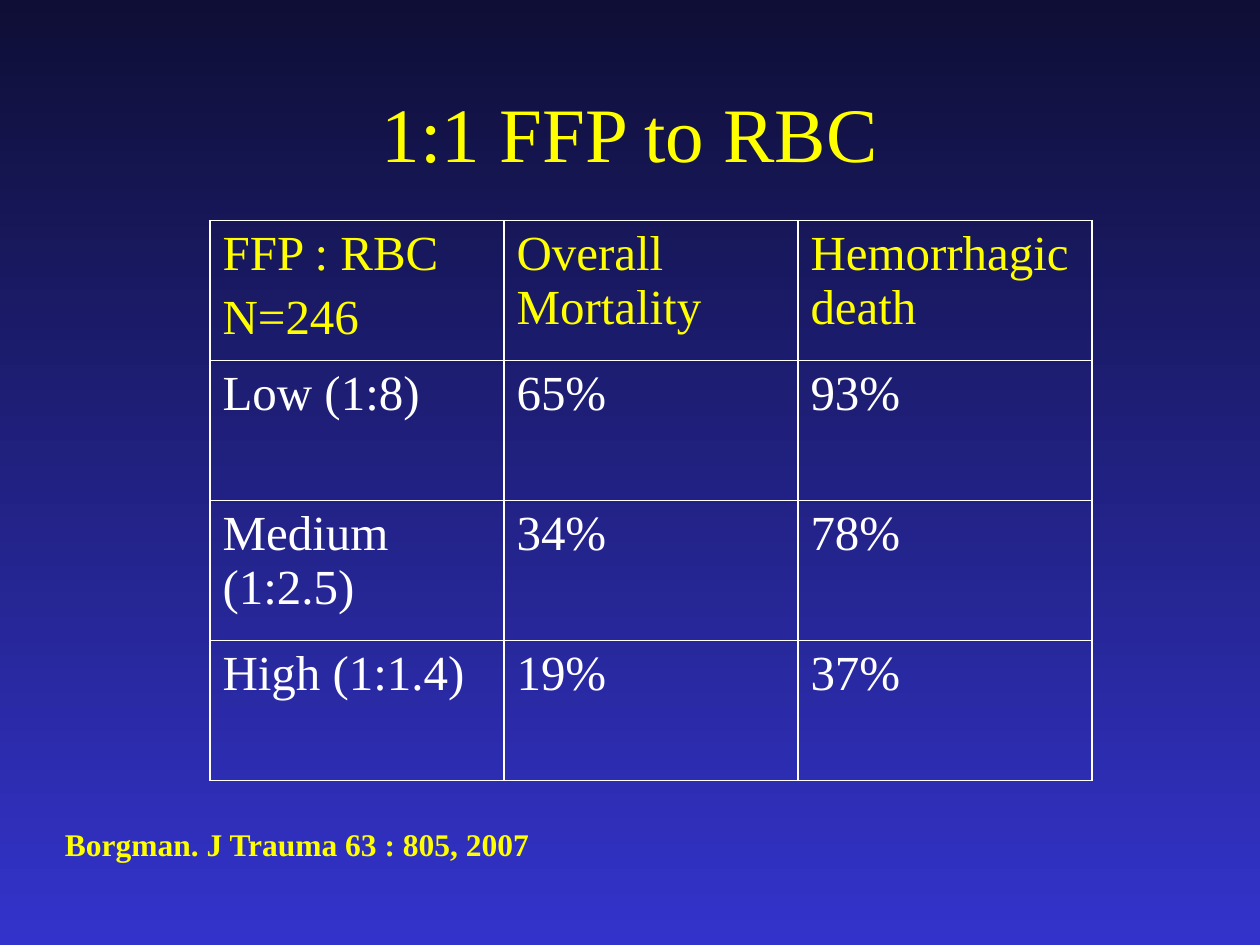
from lxml import etree
from pptx import Presentation
from pptx.dml.color import RGBColor
from pptx.enum.text import MSO_ANCHOR, PP_ALIGN
from pptx.oxml.ns import qn
from pptx.util import Pt

CENTER, LEFT = PP_ALIGN.CENTER, PP_ALIGN.LEFT
MIDDLE, TOP = MSO_ANCHOR.MIDDLE, MSO_ANCHOR.TOP
FONT = "Times New Roman"
COLORS = {"accent": "FFFF00", "body": "FFFFFF", "night": "0E0E36", "blue": "3333CC"}


class Deck:
    def __init__(self, width, height):
        self.presentation = Presentation()
        self.presentation.slide_width = Pt(width)
        self.presentation.slide_height = Pt(height)
        self.slide = None

    def add_slide(self, top_color, bottom_color):
        layout = self.presentation.slide_layouts[6]
        self.slide = self.presentation.slides.add_slide(layout)
        fill = self.slide.background.fill
        fill.gradient()
        fill.gradient_angle = 270
        for stop, color in zip(fill.gradient_stops, (top_color, bottom_color)):
            stop.color.rgb = RGBColor.from_string(COLORS[color])

    def set_text(self, frame, text, size, color, bold=False, align=LEFT):
        frame.word_wrap = True
        frame.text = text
        for index, paragraph in enumerate(frame.paragraphs):
            paragraph.alignment = align
            paragraph.space_before = Pt(0.2 * size if index else 0)
            paragraph.font.name = FONT
            paragraph.font.size = Pt(size)
            paragraph.font.bold = bold
            paragraph.font.color.rgb = RGBColor.from_string(COLORS[color])

    def text(self, box, text, size, color, bold=False, align=LEFT, anchor=TOP):
        frame = self.slide.shapes.add_textbox(*map(Pt, box)).text_frame
        frame.vertical_anchor = anchor
        self.set_text(frame, text, size, color, bold, align)

    def border(self, cell, color, width):
        properties = cell._tc.get_or_add_tcPr()
        for position, side in enumerate(("lnL", "lnR", "lnT", "lnB")):
            line = etree.Element(qn(f"a:{side}"), w=str(Pt(width)))
            solid = etree.SubElement(line, qn("a:solidFill"))
            etree.SubElement(solid, qn("a:srgbClr"), val=COLORS[color])
            properties.insert(position, line)

    def table(self, left, top, column_width, row_height, rows, size):
        columns = len(rows[0])
        table = self.slide.shapes.add_table(
            len(rows), columns, Pt(left), Pt(top),
            Pt(columns * column_width), Pt(len(rows) * row_height),
        ).table
        table.first_row = table.horz_banding = False
        for row_index, row in enumerate(rows):
            for column_index, text in enumerate(row):
                cell = table.cell(row_index, column_index)
                cell.fill.background()
                self.border(cell, "body", 1)
                self.set_text(cell.text_frame, text, size, "body" if row_index else "accent")


def main():
    mortality = [
        ("FFP : RBC\nN=246", "Overall Mortality", "Hemorrhagic death"),
        ("Low (1:8)", "65%", "93%"),
        ("Medium (1:2.5)", "34%", "78%"),
        ("High (1:1.4)", "19%", "37%"),
    ]
    deck = Deck(720, 540)
    deck.add_slide("night", "blue")
    deck.text((54, 30, 612, 90), "1:1 FFP to RBC", 44, "accent", align=CENTER, anchor=MIDDLE)
    deck.table(120, 126, 168, 80, mortality, 28)
    deck.text((30, 468, 378, 29), "Borgman. J Trauma 63 : 805, 2007", 18, "accent", bold=True)
    deck.presentation.save("out.pptx")


if __name__ == "__main__":
    main()
